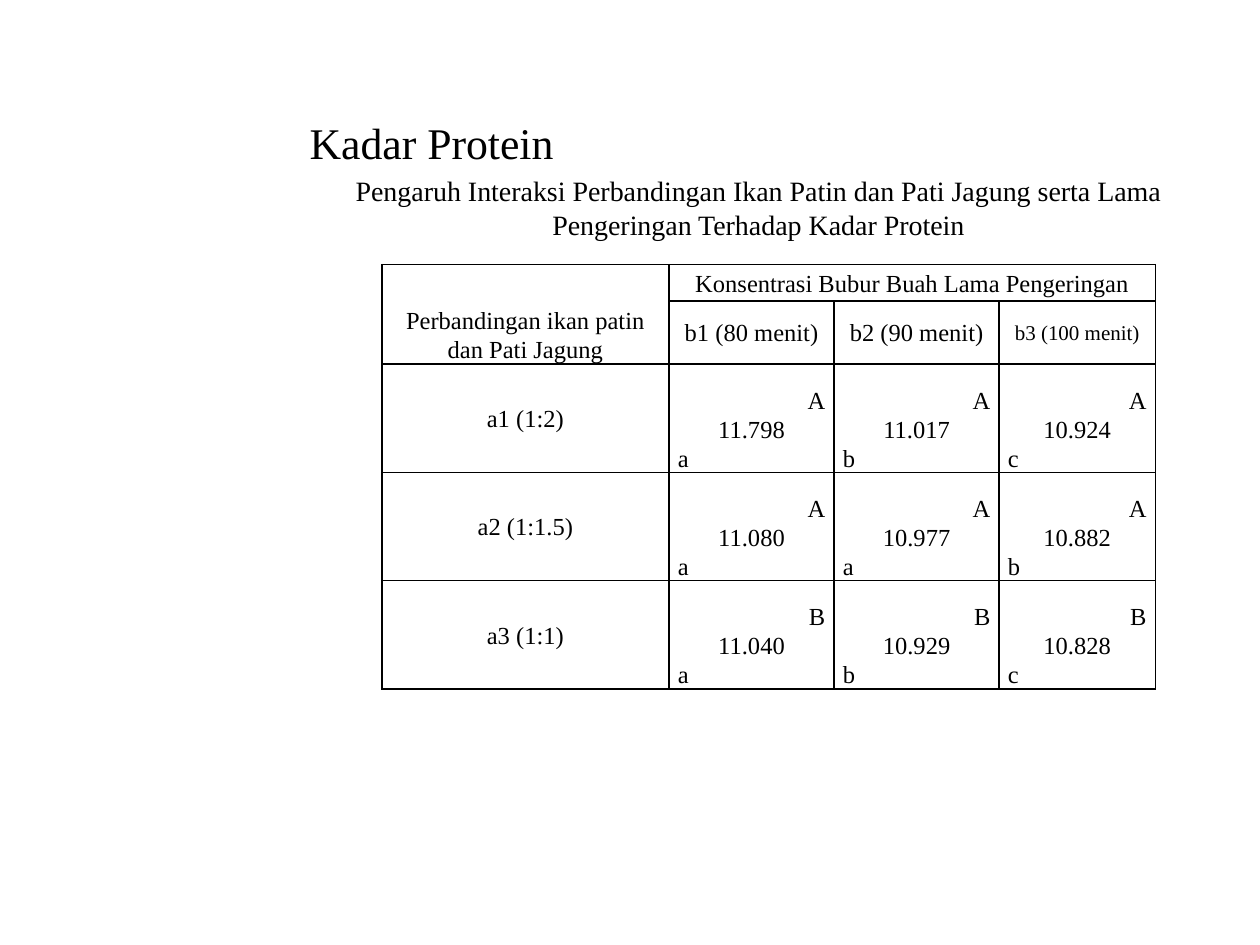
import pptx
import pptx.util
import pptx.dml.color
import pptx.enum.text
import pptx.oxml

ALIGN = pptx.enum.text.PP_ALIGN
ANCHOR = pptx.enum.text.MSO_ANCHOR
LEFT, MID, RIGHT = ALIGN.LEFT, ALIGN.CENTER, ALIGN.RIGHT
BLACK = "000000"
NS = "http://schemas.openxmlformats.org/drawingml/2006/main"


def color(code):
    return pptx.dml.color.RGBColor.from_string(code)


class Page:
    """Style and current slide; lengths are in grid cells of 0.1 inch."""
    font = "Times New Roman"
    cols = 100

    def __init__(self, deck):
        self.slide = deck.slides.add_slide(deck.slide_layouts[6])
        self.unit = deck.slide_width / self.cols

    def size(self, cells):
        return pptx.util.Emu(round(cells * self.unit))

    def fill(self, frame, lines, space=None):
        """Fill a frame with (text, points, alignment) lines."""
        for i, (text, points, align) in enumerate(lines):
            par = frame.paragraphs[0] if i == 0 else frame.add_paragraph()
            par.text = text
            par.alignment = align
            par.line_spacing = space
            par.font.name = self.font
            par.font.size = pptx.util.Pt(points)
            par.font.color.rgb = color(BLACK)

    def text(self, box, lines):
        shape = self.slide.shapes.add_textbox(*map(self.size, box))
        frame = shape.text_frame
        frame.word_wrap = True
        frame.margin_top = self.size(0.8)
        self.fill(frame, lines)
        return frame.paragraphs

    def table(self, left, top, widths, heights):
        box = (left, top, sum(widths), sum(heights))
        grid = self.slide.shapes.add_table(
            len(heights), len(widths), *map(self.size, box)).table
        grid.first_row = grid.horz_banding = False
        for col, width in zip(grid.columns, widths):
            col.width = self.size(width)
        for row, height in zip(grid.rows, heights):
            row.height = self.size(height)
        for cell in grid.iter_cells():
            self.frame(cell)
        return grid

    def frame(self, cell):
        """Plain cell with a thin line on each side."""
        cell.margin_left = cell.margin_right = self.size(0.7)
        cell.margin_top = cell.margin_bottom = 0
        props = cell._tc.get_or_add_tcPr()
        for side in "LRTB":
            props.append(pptx.oxml.parse_xml(
                f'<a:ln{side} xmlns:a="{NS}" w="12700"><a:solidFill>'
                f'<a:srgbClr val="{BLACK}"/></a:solidFill></a:ln{side}>'))
        cell.fill.background()

    def cell(self, cell, lines, anchor=ANCHOR.MIDDLE):
        cell.vertical_anchor = anchor
        self.fill(cell.text_frame, lines, 1.07)


def main():
    deck = pptx.Presentation()
    deck.slide_width = pptx.util.Inches(10)
    deck.slide_height = pptx.util.Inches(7.5)
    page = Page(deck)

    # Title and caption
    title, note = page.text((22.4, 8.4, 75.6, 63.5), [
        ("Kadar Protein", 25, LEFT),
        ("Pengaruh Interaksi Perbandingan Ikan Patin dan Pati Jagung serta "
         "Lama Pengeringan Terhadap Kadar Protein", 16, MID)])
    title._p.get_or_add_pPr().set("marL", str(page.size(1.2)))
    note.space_before = pptx.util.Pt(3.2)

    # Table heads
    grid = page.table(30.3, 21, [22.8, 13.1, 13.1, 12.4],
                      [2.9, 2.9, 8.6, 8.6, 8.6])
    grid.cell(0, 0).merge(grid.cell(1, 0))
    grid.cell(0, 1).merge(grid.cell(0, 3))
    page.cell(grid.cell(0, 0),
              [("Perbandingan ikan patin dan Pati Jagung", 14, MID)],
              ANCHOR.BOTTOM)
    page.cell(grid.cell(0, 1),
              [("Konsentrasi Bubur Buah Lama Pengeringan", 14, MID)])
    heads = [("b1 (80 menit)", 14), ("b2 (90 menit)", 14),
             ("b3 (100 menit)", 12)]
    for c, (text, points) in enumerate(heads, 1):
        page.cell(grid.cell(1, c), [(text, points, MID)])

    # Data rows: ratio, upper mark, values, lower marks
    data = [
        ("a1 (1:2)", "A", ["11.798", "11.017", "10.924"], "abc"),
        ("a2 (1:1.5)", "A", ["11.080", "10.977", "10.882"], "aab"),
        ("a3 (1:1)", "B", ["11.040", "10.929", "10.828"], "abc"),
    ]
    for r, (ratio, mark, values, lows) in enumerate(data, 2):
        page.cell(grid.cell(r, 0), [(ratio, 14, MID)])
        for c, (value, low) in enumerate(zip(values, lows), 1):
            page.cell(grid.cell(r, c),
                      [(mark, 14, RIGHT), (value, 14, MID), (low, 14, LEFT)],
                      ANCHOR.BOTTOM)

    deck.save("out.pptx")


if __name__ == "__main__":
    main()
